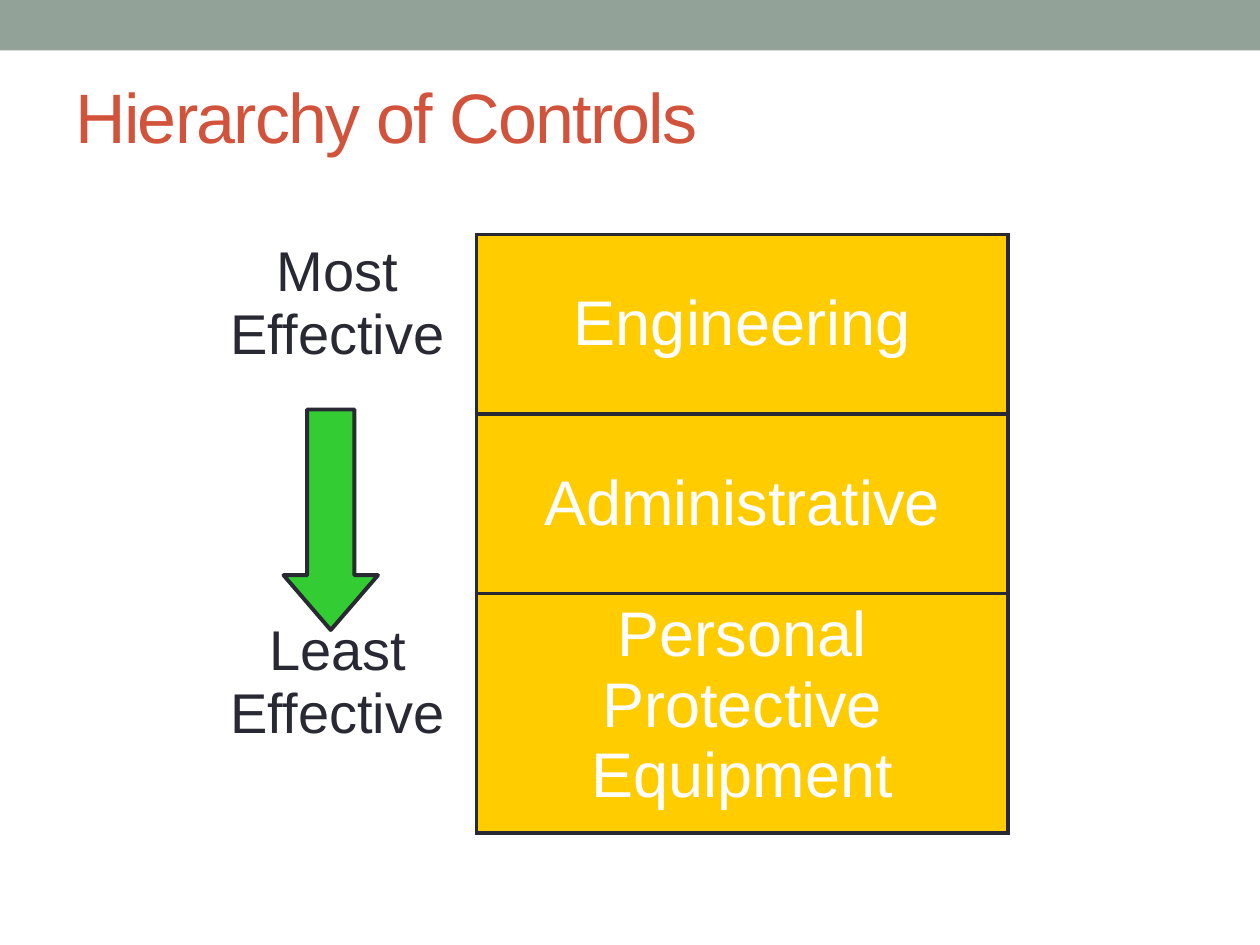
from dataclasses import dataclass

from lxml import etree
from pptx import Presentation
from pptx import util as u
from pptx.dml.color import RGBColor
from pptx.enum import shapes, text
from pptx.oxml import ns

COLORS = {
    "band": "93A299",
    "title": "D2533C",
    "ink": "292934",
    "control": "FFCC00",
    "control_text": "FFFFFF",
    "arrow": "33CC33",
}
FONT = "Arial"
OUTLINE = u.Pt(2.25)
COLUMN_WIDTHS = (158.4, 303.84)
ROW_HEIGHTS = (102.6, 102.6, 136.8)


@dataclass(frozen=True)
class Level:
    effectiveness: tuple[str, ...]
    control: str
    anchor: text.MSO_ANCHOR = text.MSO_ANCHOR.MIDDLE
    label_top: float = 3.6


LEVELS = (
    Level(("Most", "Effective"), "Engineering"),
    Level((), "Administrative"),
    Level(("Least", "Effective"), "Personal Protective Equipment",
          text.MSO_ANCHOR.TOP, label_top=15.1),
)


def color(name: str) -> RGBColor:
    return RGBColor.from_string(COLORS[name])


def style(paragraph, size: float, color_name: str) -> None:
    paragraph.font.name = FONT
    paragraph.font.size = u.Pt(size)
    paragraph.font.color.rgb = color(color_name)


def write_cell(cell, lines: tuple[str, ...], size: float, color_name: str) -> None:
    frame = cell.text_frame
    for index, line in enumerate(lines):
        paragraph = frame.add_paragraph() if index else frame.paragraphs[0]
        paragraph.text = line
        paragraph.alignment = text.PP_ALIGN.CENTER
        style(paragraph, size, color_name)


def set_borders(cell, sides: str) -> None:
    """Draw the given sides (from L, R, T, B), which precede the fill in the XML."""
    properties = cell._tc.get_or_add_tcPr()
    for index, side in enumerate(sides):
        line = etree.Element(ns.qn(f"a:ln{side}"), w=str(int(OUTLINE)))
        fill = etree.SubElement(line, ns.qn("a:solidFill"))
        etree.SubElement(fill, ns.qn("a:srgbClr"), val=COLORS["ink"])
        properties.insert(index, line)


def add_solid(slide, kind, box: tuple[float, ...], color_name: str):
    solid = slide.shapes.add_shape(kind, *map(u.Pt, box))
    solid.shadow.inherit = False
    solid.fill.solid()
    solid.fill.fore_color.rgb = color(color_name)
    solid.line.fill.background()
    return solid


def add_title(slide, wording: str) -> None:
    title = slide.shapes.add_textbox(u.Pt(36), u.Pt(30.24), u.Pt(750.24), u.Pt(72))
    frame = title.text_frame
    frame.word_wrap = True
    frame.vertical_anchor = text.MSO_ANCHOR.MIDDLE
    heading = frame.paragraphs[0]
    run = heading.add_run()
    run.text = wording
    style(heading, 40, "title")
    run._r.get_or_add_rPr().set("spc", "-100")


def add_hierarchy(slide) -> None:
    hierarchy = slide.shapes.add_table(
        len(LEVELS), len(COLUMN_WIDTHS), u.Pt(113.76), u.Pt(133.92),
        u.Pt(sum(COLUMN_WIDTHS)), u.Pt(sum(ROW_HEIGHTS))).table
    hierarchy.first_row = False
    hierarchy.horz_banding = False
    for column, width in zip(hierarchy.columns, COLUMN_WIDTHS):
        column.width = u.Pt(width)
    for row, height, level in zip(hierarchy.rows, ROW_HEIGHTS, LEVELS):
        row.height = u.Pt(height)
        label, control = row.cells

        label.fill.background()
        label.margin_top = u.Pt(level.label_top)
        write_cell(label, level.effectiveness, 32, "ink")
        set_borders(label, "R")

        control.fill.solid()
        control.fill.fore_color.rgb = color("control")
        control.vertical_anchor = level.anchor
        write_cell(control, (level.control,), 36, "control_text")
        set_borders(control, "LRTB")


def main() -> None:
    deck = Presentation()
    deck.slide_width, deck.slide_height = u.Pt(720), u.Pt(540)
    slide = deck.slides.add_slide(deck.slide_layouts[6])

    # Top band and title
    add_solid(slide, shapes.MSO_SHAPE.RECTANGLE, (0, 0, 720, 28.8), "band")
    add_title(slide, "Hierarchy of Controls")

    # Controls, ranked from most to least effective
    add_hierarchy(slide)

    # Arrow from most to least effective
    arrow = add_solid(slide, shapes.MSO_SHAPE.DOWN_ARROW, (162, 234, 54, 126), "arrow")
    arrow.adjustments[1] = 0.58
    arrow.line.color.rgb = color("ink")
    arrow.line.width = OUTLINE

    deck.save("out.pptx")


if __name__ == "__main__":
    main()
